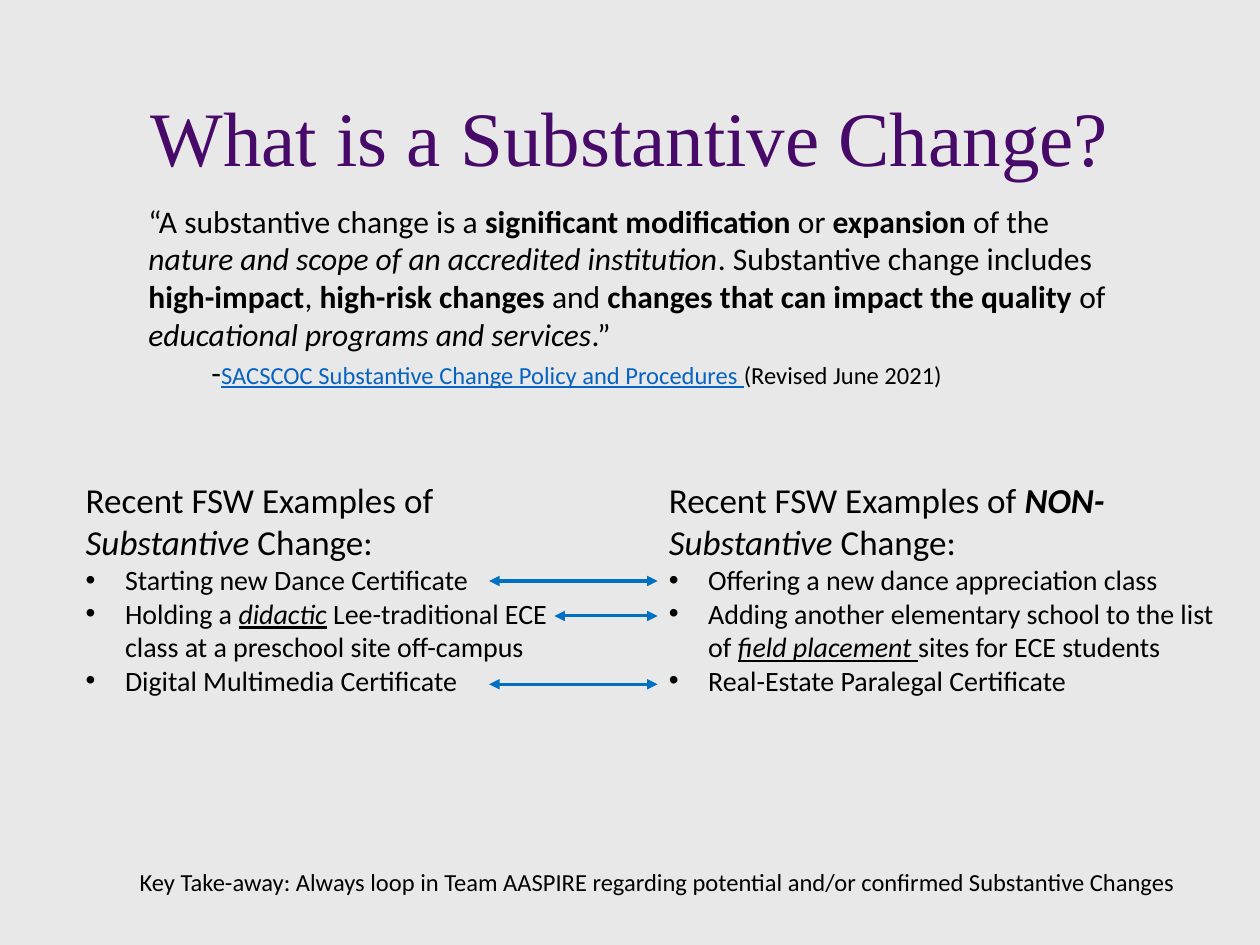
from lxml import etree
from pptx import Presentation
from pptx import util as u
from pptx.dml.color import RGBColor
from pptx.enum import shapes, text
from pptx.oxml.ns import qn

Pt = u.Pt
INK, PURPLE, LINK, BLUE = "000000", "470A68", "0563C1", "0070C0"

TITLE = [(44, [("What is a Substantive Change?", "")])]
QUOTE = [
    (18, [("“A substantive change is a ", ""), ("significant modification", "b"),
          (" or ", ""), ("expansion", "b"), (" of the ", ""),
          ("nature and scope of an accredited institution", "i"),
          (". Substantive change includes ", ""), ("high-impact", "b"), (", ", ""),
          ("high-risk changes", "b"), (" and ", ""),
          ("changes that can impact the quality", "b"), (" of ", ""),
          ("educational programs and services", "i"), (".”", "")]),
    (18, [("\t-", ""),
          ("SACSCOC Substantive Change Policy and Procedures ", "ul", 14),
          ("(Revised June 2021)", "", 14)]),
]
LISTS = [
    ((41.75, 270, 284.4, 133.2), [
        (20, [("Recent FSW Examples of ", ""), ("Substantive", "i"), (" Change:", "")]),
        (16, [("Starting new Dance Certificate", "")]),
        (16, [("Holding a ", ""), ("didactic", "iu"),
              (" Lee-traditional ECE class at a preschool site off-campus", "")]),
        (16, [("Digital Multimedia Certificate", "")]),
    ]),
    ((375, 270, 331.2, 150.5), [
        (20, [("Recent FSW Examples of ", ""), ("NON-", "bi"), ("Substantive", "i"),
              (" Change:", "")]),
        (16, [("Offering a new dance appreciation class", "")]),
        (16, [("Adding another elementary school to the list of ", ""),
              ("field placement ", "iu"), ("sites for ECE students", "")]),
        (16, [("Real-Estate Paralegal Certificate", "")]),
    ]),
]
NOTE = [(14, [("Key Take-away: Always loop in Team AASPIRE regarding potential "
               "and/or confirmed Substantive Changes", "")])]
ARROWS = [(279.5, 332), (316.8, 352), (279.5, 391)]
ARROW_END = 375.8


def tint(code):
    return RGBColor.from_string(code)


def place(box, spot):
    box.left, box.top, box.width, box.height = map(Pt, spot)


def mark(para, char):
    props = para._p.get_or_add_pPr()
    dent = Pt(22.5) if char else 0
    props.set("marL", str(dent))
    props.set("indent", str(-dent))
    if char:
        etree.SubElement(props, qn("a:buFont")).set("typeface", "Arial")
        etree.SubElement(props, qn("a:buChar")).set("char", char)
    else:
        etree.SubElement(props, qn("a:buNone"))


def write(box, paras, face="Calibri", ink=INK, bullets=False):
    frame = box.text_frame
    frame.word_wrap = True
    for i, (size, runs) in enumerate(paras):
        para = frame.add_paragraph() if i else frame.paragraphs[0]
        mark(para, "•" if bullets and i else "")
        para.space_before = Pt(0)
        for words, style, *own in runs:
            run = para.add_run()
            run.text = words
            font = run.font
            font.name = face
            font.size = Pt(own[0] if own else size)
            font.bold = "b" in style
            font.italic = "i" in style
            font.underline = "u" in style
            font.color.rgb = tint(LINK if "l" in style else ink)
    return frame


def arrow(slide, left, y):
    line = slide.shapes.add_connector(
        shapes.MSO_CONNECTOR.STRAIGHT, Pt(left), Pt(y), Pt(ARROW_END), Pt(y))
    line.line.color.rgb = tint(BLUE)
    line.line.width = Pt(1.75)
    stroke = line.line._get_or_add_ln()
    for end in ("a:headEnd", "a:tailEnd"):
        etree.SubElement(stroke, qn(end)).set("type", "triangle")
    etree.SubElement(line._element.spPr, qn("a:effectLst"))


def main():
    deck = Presentation()
    deck.slide_width, deck.slide_height = Pt(720), Pt(540)
    slide = deck.slides.add_slide(deck.slide_layouts[3])
    slide.background.fill.solid()
    slide.background.fill.fore_color.rgb = tint("E8E8E8")

    title, *bodies = slide.placeholders
    place(title, (49.5, 28.8, 621, 104.4))
    frame = write(title, TITLE, "Times New Roman", PURPLE)
    frame.auto_size = text.MSO_AUTO_SIZE.NONE
    frame.vertical_anchor = text.MSO_ANCHOR.MIDDLE
    frame.paragraphs[0].alignment = text.PP_ALIGN.CENTER
    frame.paragraphs[0].line_spacing = 0.9

    for spot, paras in ((77.75, 111.6, 570.25, 116.65), QUOTE), ((72.7, 491.8, 614.2, 24.5), NOTE):
        box = slide.shapes.add_textbox(*map(Pt, spot))
        write(box, paras).auto_size = text.MSO_AUTO_SIZE.SHAPE_TO_FIT_TEXT

    for body, (spot, paras) in zip(bodies, LISTS):
        place(body, spot)
        frame = write(body, paras, bullets=True)
        frame.auto_size = text.MSO_AUTO_SIZE.SHAPE_TO_FIT_TEXT
        frame.vertical_anchor = text.MSO_ANCHOR.TOP

    for left, y in ARROWS:
        arrow(slide, left, y)
    deck.save("out.pptx")


if __name__ == "__main__":
    main()
